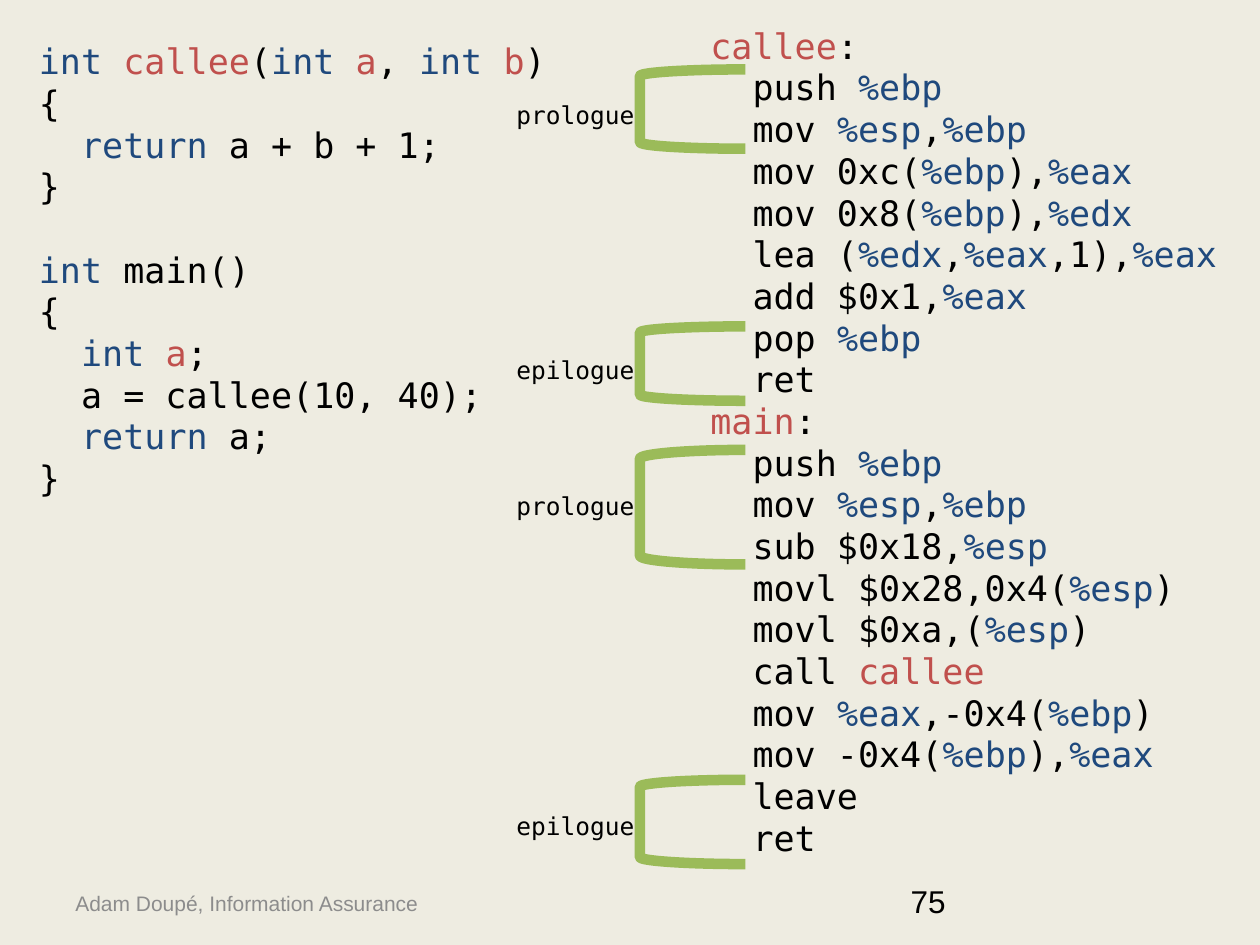
from dataclasses import dataclass

from lxml.etree import SubElement
from pptx import Presentation
from pptx.dml.color import RGBColor
from pptx.enum.shapes import MSO_SHAPE
from pptx.enum.text import MSO_ANCHOR, MSO_AUTO_SIZE
from pptx.oxml.ns import qn
from pptx.shapes.base import BaseShape
from pptx.slide import Slide
from pptx.util import Cm, Pt

BACKGROUND = RGBColor(0xEE, 0xEC, 0xE1)
BLACK = RGBColor(0x00, 0x00, 0x00)
BLUE = RGBColor(0x1F, 0x49, 0x7D)
RED = RGBColor(0xC0, 0x50, 0x4D)
GREEN = RGBColor(0x9B, 0xBB, 0x59)
GREY = RGBColor(0x8C, 0x8C, 0x8C)
MONO = "DejaVu Sans Mono"
SANS = "Arial"

# Code markup: <blue keyword or register>, [red name]; the rest is black.
COLOUR_MARKS = {"<": BLUE, "[": RED, ">": BLACK, "]": BLACK}

C_CODE = """\
<int >[callee](<int >[a], <int >[b])
{
  <return >a + b + 1;
}

<int >main()
{
  <int >[a];
  a = callee(10, 40);
  <return> a;
}"""

ASSEMBLY_CODE = """\
[callee]:
  push <%ebp>
  mov <%esp>,<%ebp>
  mov 0xc(<%ebp>),<%eax>
  mov 0x8(<%ebp>),<%edx>
  lea (<%edx>,<%eax>,1),<%eax>
  add $0x1,<%eax>
  pop <%ebp>
  ret
[main]:
  push <%ebp>
  mov <%esp>,<%ebp>
  sub $0x18,<%esp>
  movl $0x28,0x4(<%esp>)
  movl $0xa,(<%esp>)
  call [callee]
  mov <%eax>,-0x4(<%ebp>)
  mov -0x4(<%ebp>),<%eax>
  leave
  ret"""


@dataclass(frozen=True)
class Section:
    """A bracketed part of the assembly; lengths in centimetres."""
    label: str
    top: float
    height: float
    label_top: float
    label_height: float


SECTIONS = (
    Section("prologue", 9.07, 2.31, 9.78, 1.32),
    Section("epilogue", 15.72, 1.7, 16.23, 1.45),
    Section("prologue", 1.4, 1.6, 1.9, 0.91),
    Section("epilogue", 6.58, 1.5, 7.04, 1.3),
)


def split_colours(line: str) -> list[tuple[str, RGBColor]]:
    pieces, text, colour = [], "", BLACK
    for character in line:
        if character in COLOUR_MARKS:
            if text:
                pieces.append((text, colour))
            text, colour = "", COLOUR_MARKS[character]
        else:
            text += character
    return pieces + [(text, colour)] if text else pieces


def write_text(shape: BaseShape, text: str, *, size: float, font: str = MONO,
               colour: RGBColor = BLACK, code: bool = False, wrap: bool = True,
               anchor: MSO_ANCHOR = MSO_ANCHOR.TOP) -> None:
    frame = shape.text_frame
    frame.word_wrap = wrap
    frame.auto_size = MSO_AUTO_SIZE.NONE
    frame.vertical_anchor = anchor
    for index, line in enumerate(text.split("\n")):
        paragraph = frame.paragraphs[0] if index == 0 else frame.add_paragraph()
        if code:
            properties = paragraph._p.get_or_add_pPr()
            properties.set("marL", "0")
            properties.set("indent", "0")
            SubElement(properties, qn("a:buNone"))
            paragraph.line_spacing = 0.8
            paragraph.space_before = Pt(4.6 if index else 0)
        paragraph.font.size = Pt(size)
        paragraph.font.name = font
        for piece, piece_colour in split_colours(line) if code else [(line, colour)]:
            run = paragraph.add_run()
            run.text = piece
            run.font.size = Pt(size)
            run.font.name = font
            run.font.color.rgb = piece_colour


def draw_section(slide: Slide, section: Section) -> None:
    group = slide.shapes.add_group_shape()
    bracket = group.shapes.add_shape(MSO_SHAPE.RIGHT_BRACKET, Cm(12.9), Cm(section.top),
                                     Cm(2.13), Cm(section.height))
    bracket._element.spPr.xfrm.set("flipH", "1")
    bracket.shadow.inherit = False
    bracket.fill.background()
    bracket.line.color.rgb = GREEN
    bracket.line.width = Pt(6)
    label = group.shapes.add_textbox(Cm(10.16), Cm(section.label_top),
                                     Cm(3.81), Cm(section.label_height))
    write_text(label, section.label, size=14)


def main() -> None:
    presentation = Presentation()
    presentation.slide_width, presentation.slide_height = Cm(25.4), Cm(19.05)
    slide = presentation.slides.add_slide(presentation.slide_layouts[1])
    slide.background.fill.solid()
    slide.background.fill.fore_color.rgb = BACKGROUND
    title = slide.shapes.title._element
    title.getparent().remove(title)

    footer = slide.shapes.add_textbox(Cm(1.27), Cm(17.7), Cm(10.82), Cm(1.02))
    write_text(footer, "Adam Doupé, Information Assurance", size=12, font=SANS,
               colour=GREY, anchor=MSO_ANCHOR.MIDDLE)

    c_listing = slide.placeholders[1]
    c_listing.left, c_listing.top = Cm(0.53), Cm(0.84)
    c_listing.width, c_listing.height = Cm(11.76), Cm(12.57)
    write_text(c_listing, C_CODE, size=20, code=True)

    page_number = slide.shapes.add_textbox(Cm(18.11), Cm(17.65), Cm(5.92), Cm(1.02))
    write_text(page_number, "75", size=18, font=SANS)

    assembly_listing = slide.shapes.add_textbox(Cm(14.07), Cm(0.53), Cm(16.21), Cm(18.52))
    write_text(assembly_listing, ASSEMBLY_CODE, size=20, code=True)

    for section in SECTIONS:
        draw_section(slide, section)
    presentation.save("out.pptx")


if __name__ == "__main__":
    main()
